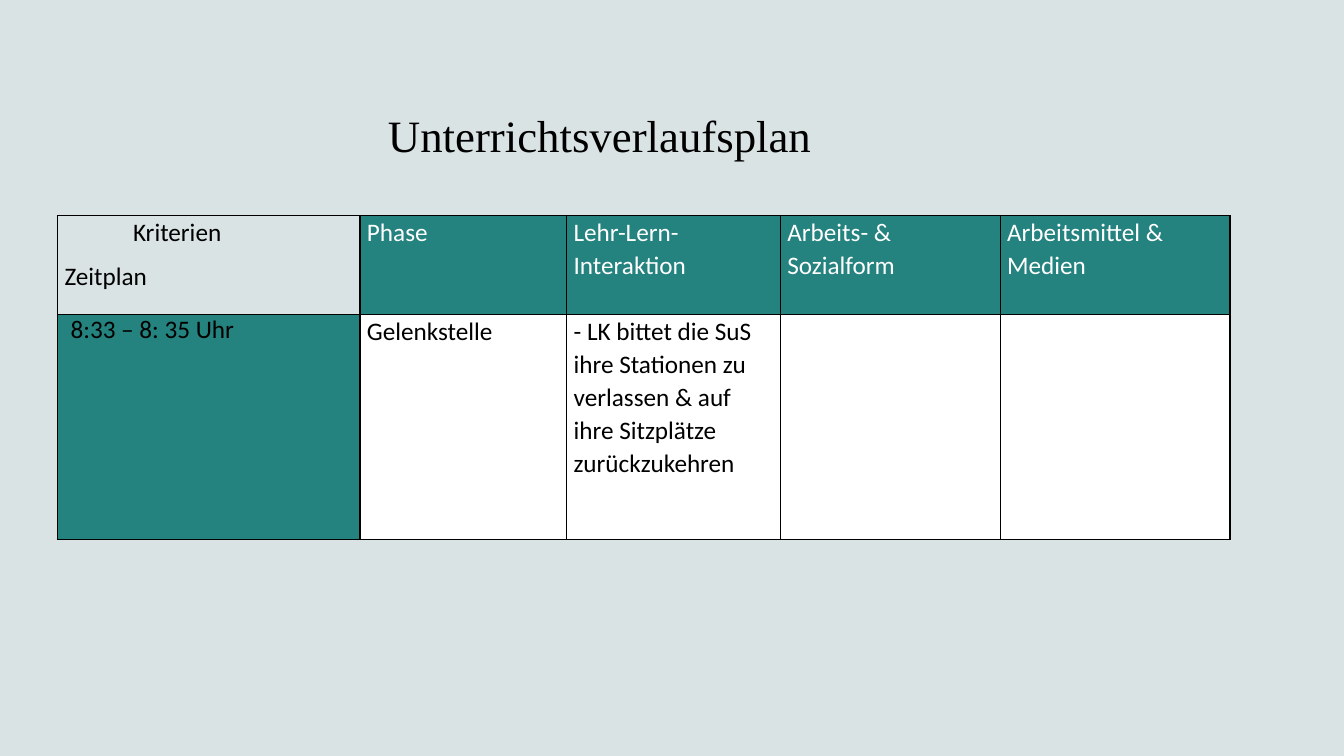
from lxml.etree import SubElement
from pptx import Presentation
from pptx.dml.color import RGBColor
from pptx.enum.text import MSO_ANCHOR
from pptx.oxml.ns import qn
from pptx.util import Inches, Pt

BACKGROUND = RGBColor(0xDA, 0xE3, 0xE3)
TEAL = RGBColor(0x24, 0x82, 0x7F)
WHITE = RGBColor(0xFF, 0xFF, 0xFF)
BLACK = RGBColor(0x00, 0x00, 0x00)

COLUMN_WIDTHS = [3, 2.05, 2.12, 2.18, 2.28]
ROW_HEIGHTS = [0.98, 2.23]
CELL_MARGINS = {
    "margin_left": Inches(0.07),
    "margin_right": Inches(0.07),
    "margin_top": 0,
    "margin_bottom": 0,
}

# Each cell: paragraphs, fill colour, text colour
HEADER = [(["Kriterien", "Zeitplan"], None, BLACK)] + [
    ([label], TEAL, WHITE)
    for label in ("Phase", "Lehr-Lern-Interaktion", "Arbeits- & Sozialform",
                  "Arbeitsmittel & Medien")
]
LESSON = [(["8:33 – 8: 35 Uhr"], TEAL, BLACK)] + [
    (paragraphs, WHITE, BLACK)
    for paragraphs in (
        ["Gelenkstelle"],
        ["- LK bittet die SuS ihre Stationen zu verlassen & auf "
         "ihre Sitzplätze zurückzukehren"],
        [],
        [],
    )
]
INDENTS = {"Kriterien": 0.68, "8:33 – 8: 35 Uhr": 0.06}
SINGLE_SPACED = {"8:33 – 8: 35 Uhr"}


def set_attributes(target, values):
    for name, value in values.items():
        setattr(target, name, value)


def add_text(paragraph, text, font_name, size, color):
    run = paragraph.add_run()
    run.text = text
    set_attributes(run.font, {"name": font_name, "size": Pt(size), "bold": False})
    run.font.color.rgb = color


def add_title(slide, text):
    box = slide.shapes.add_textbox(Inches(3.75), Inches(0.43), Inches(9), Inches(1.22))
    set_attributes(box.text_frame, {"word_wrap": True, "vertical_anchor": MSO_ANCHOR.BOTTOM})
    add_text(box.text_frame.paragraphs[0], text, "Times New Roman", 32, BLACK)


def add_borders(cell):
    properties = cell._tc.get_or_add_tcPr()
    for side in ("a:lnL", "a:lnR", "a:lnT", "a:lnB"):
        line = SubElement(properties, qn(side), w=str(Pt(1)))
        fill = SubElement(line, qn("a:solidFill"))
        SubElement(fill, qn("a:srgbClr"), val=str(BLACK))


def fill_cell(cell, paragraphs, fill_color, text_color):
    set_attributes(cell, CELL_MARGINS)
    add_borders(cell)
    if fill_color is None:
        cell.fill.background()
    else:
        cell.fill.solid()
        cell.fill.fore_color.rgb = fill_color

    frame = cell.text_frame
    for index, text in enumerate(paragraphs):
        paragraph = frame.add_paragraph() if index else frame.paragraphs[0]
        paragraph.space_after = Pt(0 if index else 8)
        paragraph.line_spacing = 1.0 if text in SINGLE_SPACED else 1.07
        if text in INDENTS:
            paragraph._p.get_or_add_pPr().set("marL", str(Inches(INDENTS[text])))
        add_text(paragraph, text, "Calibri", 18, text_color)


def add_lesson_table(slide, rows):
    table = slide.shapes.add_table(
        len(ROW_HEIGHTS), len(COLUMN_WIDTHS), Inches(0.57), Inches(2.14),
        Inches(sum(COLUMN_WIDTHS)), Inches(sum(ROW_HEIGHTS)),
    ).table
    set_attributes(table, {"first_row": False, "horz_banding": False})
    for column, width in zip(table.columns, COLUMN_WIDTHS):
        column.width = Inches(width)
    for row, height, contents in zip(table.rows, ROW_HEIGHTS, rows):
        row.height = Inches(height)
        for cell, content in zip(row.cells, contents):
            fill_cell(cell, *content)


def main():
    presentation = Presentation()
    set_attributes(presentation, {"slide_width": Inches(13.33), "slide_height": Inches(7.5)})
    slide = presentation.slides.add_slide(presentation.slide_layouts[6])

    # Background
    slide.background.fill.solid()
    slide.background.fill.fore_color.rgb = BACKGROUND

    # Title and lesson plan
    add_title(slide, "Unterrichtsverlaufsplan")
    add_lesson_table(slide, [HEADER, LESSON])

    presentation.save("out.pptx")


if __name__ == "__main__":
    main()
